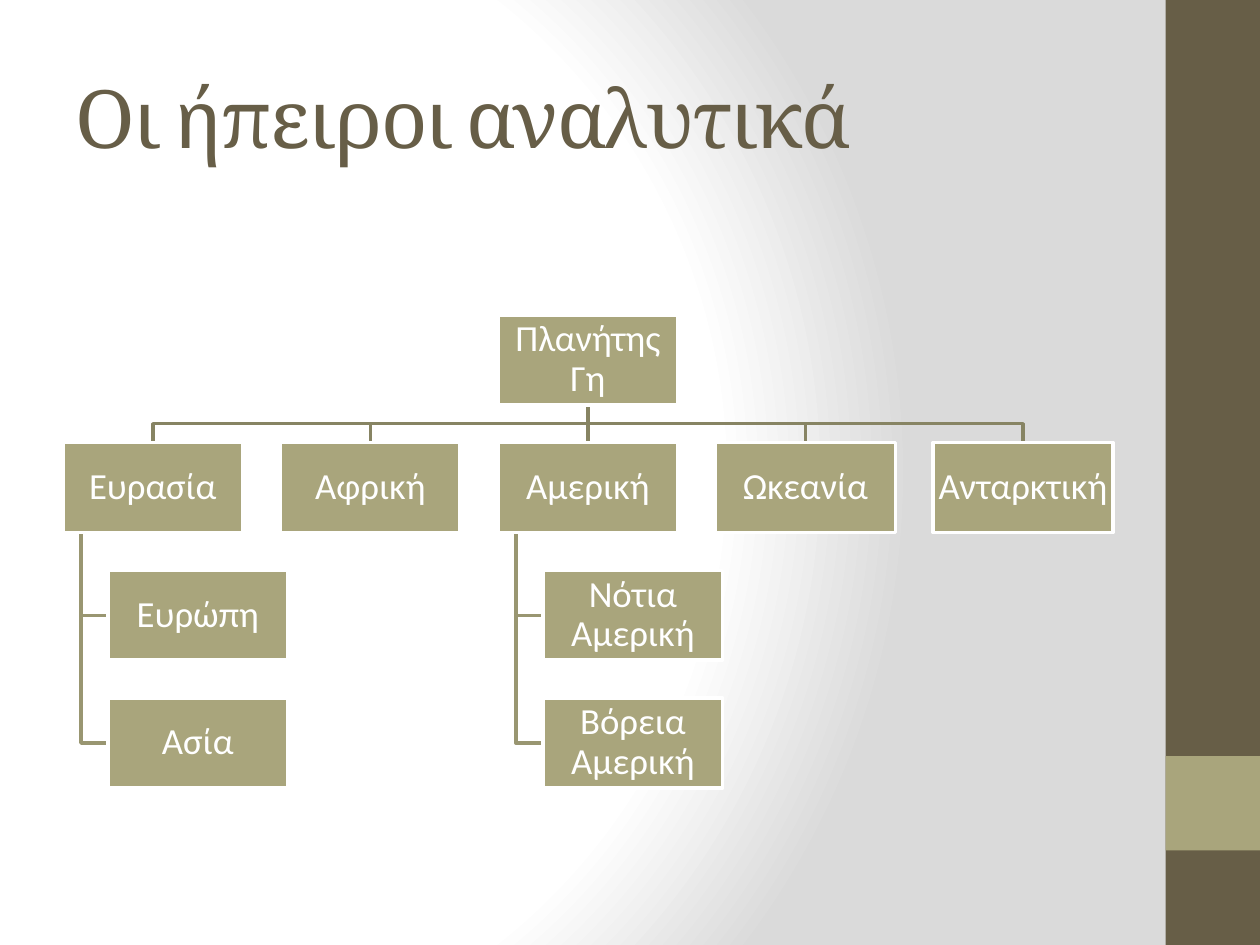
from pptx import Presentation
from pptx.dml.color import RGBColor
from pptx.enum.shapes import MSO_CONNECTOR as Connector, MSO_SHAPE as Shape
from pptx.enum.text import MSO_ANCHOR as Anchor, PP_ALIGN as Align
from pptx.oxml import parse_xml
from pptx.oxml.ns import nsdecls, qn
from pptx.util import Inches, Pt

TITLE = "Οι ήπειροι αναλυτικά"
ROOT = "Πλανήτης Γη"
CONTINENTS = [
    ("Ευρασία", ["Ευρώπη", "Ασία"]),
    ("Αφρική", []),
    ("Αμερική", ["Νότια Αμερική", "Βόρεια Αμερική"]),
    ("Ωκεανία", []),
    ("Ανταρκτική", []),
]
COLORS = {
    "brown": "675E47",
    "olive": "A9A57C",
    "trunk": "878463",
    "branch": "999671",
    "white": "FFFFFF",
    "gray": "DADADA",
}

LEFT, TOP = 0.5, 2.5
CHART_WIDTH = 25 / 3
GAP_RATIO = 0.21
COUNT = len(CONTINENTS)
MIDDLE = COUNT // 2
BOX_WIDTH = CHART_WIDTH / (COUNT + (COUNT - 1) * GAP_RATIO)
BOX_HEIGHT = BOX_WIDTH / 2
GAP = BOX_WIDTH * GAP_RATIO
COLUMN_STEP, ROW_STEP = BOX_WIDTH + GAP, BOX_HEIGHT + GAP
CHILD_INDENT, SPINE_INDENT = BOX_WIDTH / 4, BOX_WIDTH / 10


def color(name):
    return RGBColor.from_string(COLORS[name])


def column_left(column):
    return LEFT + column * COLUMN_STEP


def row_top(row):
    return TOP + row * ROW_STEP


def set_background(slide):
    slide.background.fill.gradient()
    stops = "".join(
        f'<a:gs pos="{position * 1000}"><a:srgbClr val="{COLORS[name]}"/></a:gs>'
        for position, name in [(0, "white"), (75, "white"), (100, "gray")]
    )
    gradient = slide.element.find(".//" + qn("a:gradFill"))
    gradient.getparent().replace(gradient, parse_xml(
        f'<a:gradFill {nsdecls("a")} rotWithShape="1"><a:gsLst>{stops}</a:gsLst>'
        '<a:path path="circle">'
        '<a:fillToRect l="20000" t="50000" r="100000" b="50000"/>'
        '</a:path></a:gradFill>'
    ))


def add_rectangle(slide, left, top, width, height, fill):
    shape = slide.shapes.add_shape(
        Shape.RECTANGLE, Inches(left), Inches(top), Inches(width), Inches(height)
    )
    shape.shadow.inherit = False
    shape.fill.solid()
    shape.fill.fore_color.rgb = color(fill)
    shape.line.fill.background()
    return shape


def format_run(paragraph, font_name, size, color_name):
    font = paragraph.runs[0].font
    font.name = font_name
    font.size = Pt(size)
    font.color.rgb = color(color_name)


def add_box(slide, text, left, top):
    box = add_rectangle(slide, left, top, BOX_WIDTH, BOX_HEIGHT, "olive")
    box.line.color.rgb = color("white")
    box.line.width = Pt(2)
    frame = box.text_frame
    frame.text = text
    frame.word_wrap = True
    frame.vertical_anchor = Anchor.MIDDLE
    frame.margin_left = frame.margin_right = Inches(0.01)
    frame.margin_top = frame.margin_bottom = Inches(0.01)
    paragraph = frame.paragraphs[0]
    paragraph.alignment = Align.CENTER
    paragraph.line_spacing = 0.9
    format_run(paragraph, "Calibri", 21, "white")
    return box


def style_line(shape, color_name):
    shape.line.color.rgb = color(color_name)
    shape.line.width = Pt(2)


def add_bent_line(slide, points, color_name):
    start, *others = [(Inches(x), Inches(y)) for x, y in points]
    builder = slide.shapes.build_freeform(*start)
    builder.add_line_segments(others, close=False)
    shape = builder.convert_to_shape()
    shape.shadow.inherit = False
    shape.fill.background()
    style_line(shape, color_name)


def add_title(slide):
    title = slide.shapes.title
    title.left, title.top = Inches(0.5), Inches(0.3)
    title.width, title.height = Inches(8.33), Inches(1.25)
    frame = title.text_frame
    frame.text = TITLE
    frame.vertical_anchor = Anchor.MIDDLE
    paragraph = frame.paragraphs[0]
    paragraph.alignment = Align.LEFT
    format_run(paragraph, "Cambria", 46, "brown")
    paragraph.runs[0].font._element.set("spc", "-100")


def add_lines(slide):
    center = column_left(MIDDLE) + BOX_WIDTH / 2
    start, end = row_top(0) + BOX_HEIGHT, row_top(1)
    bend = (start + end) / 2
    for column, (name, parts) in enumerate(CONTINENTS):
        left = column_left(column)
        if column != MIDDLE:
            target = left + BOX_WIDTH / 2
            points = [(center, start), (center, bend), (target, bend), (target, end)]
            add_bent_line(slide, points, "trunk")
        spine = left + SPINE_INDENT
        for row in range(2, 2 + len(parts)):
            middle = row_top(row) + BOX_HEIGHT / 2
            points = [(spine, row_top(1) + BOX_HEIGHT), (spine, middle),
                      (left + CHILD_INDENT, middle)]
            add_bent_line(slide, points, "branch")
    connector = slide.shapes.add_connector(
        Connector.STRAIGHT, Inches(center), Inches(start), Inches(center), Inches(end)
    )
    style_line(connector, "trunk")
    connector.element.spPr.append(parse_xml(f'<a:effectLst {nsdecls("a")}/>'))
    return connector


def add_chart_boxes(slide, connector):
    root = add_box(slide, ROOT, column_left(MIDDLE), row_top(0))
    connector.begin_connect(root, 2)
    for column, (name, parts) in enumerate(CONTINENTS):
        left = column_left(column)
        continent = add_box(slide, name, left, row_top(1))
        if column == MIDDLE:
            connector.end_connect(continent, 0)
        for row, part in enumerate(parts, start=2):
            add_box(slide, part, left + CHILD_INDENT, row_top(row))


def main():
    presentation = Presentation()
    presentation.slide_width, presentation.slide_height = Inches(10), Inches(7.5)
    slide = presentation.slides.add_slide(presentation.slide_layouts[5])
    set_background(slide)
    add_rectangle(slide, 9.25, 0, 0.75, 7.5, "brown")
    add_rectangle(slide, 9.25, 6, 0.75, 0.75, "olive")
    add_title(slide)
    connector = add_lines(slide)
    add_chart_boxes(slide, connector)
    presentation.save("out.pptx")


if __name__ == "__main__":
    main()
